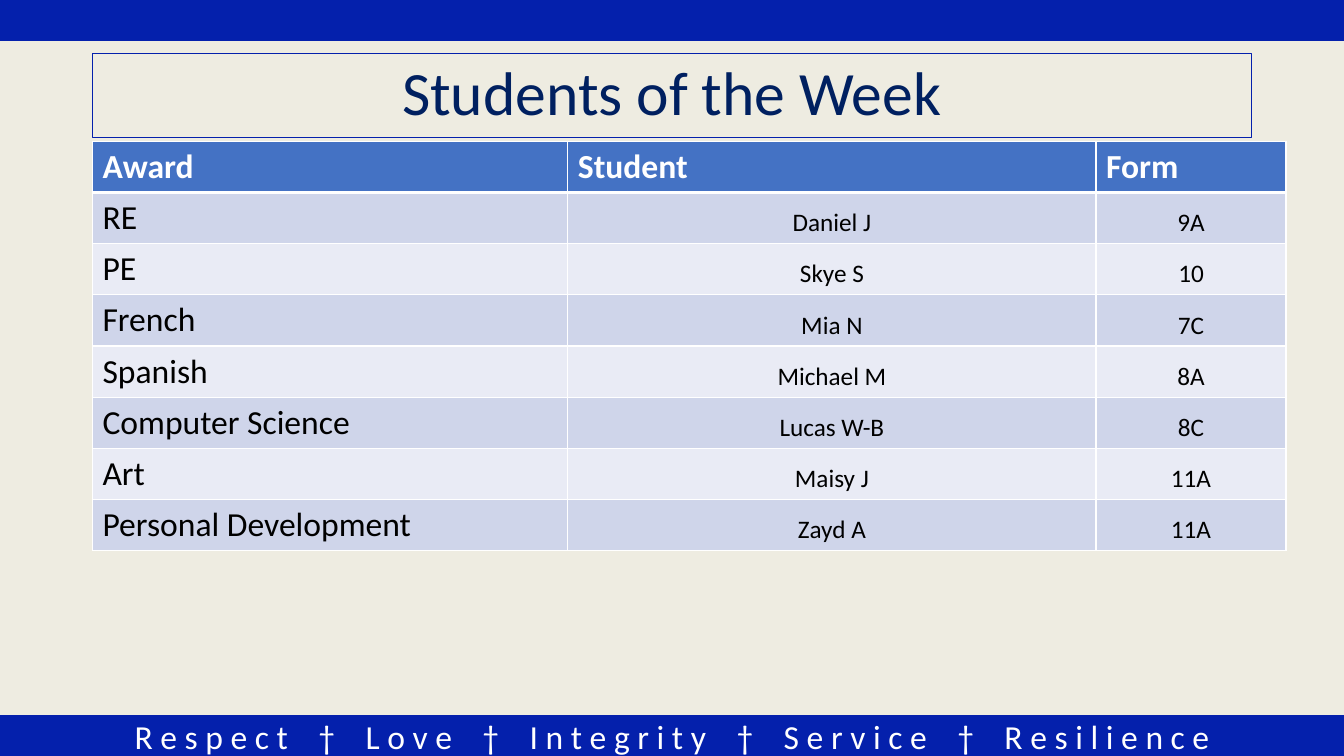
from lxml.etree import SubElement
from pptx import Presentation
from pptx.dml.color import RGBColor
from pptx.enum.shapes import MSO_SHAPE
from pptx.enum.text import MSO_ANCHOR, PP_ALIGN
from pptx.oxml.ns import qn
from pptx.util import Cm, Pt

# Content
TITLE = "Students of the Week"
VALUES = ["Respect", "Love", "Integrity", "Service", "Resilience"]
ROWS = [
    ("Award", "Student", "Form"),
    ("RE", "Daniel J", "9A"),
    ("PE", "Skye S", "10"),
    ("French", "Mia N", "7C"),
    ("Spanish", "Michael M", "8A"),
    ("Computer Science", "Lucas W-B", "8C"),
    ("Art", "Maisy J", "11A"),
    ("Personal Development", "Zayd A", "11A"),
]

# Colours and measures
CREAM = RGBColor(0xEE, 0xEC, 0xE1)
ROYAL = RGBColor(0x04, 0x20, 0xAC)
NAVY = RGBColor(0x00, 0x20, 0x60)
HEAD = RGBColor(0x44, 0x72, 0xC4)
BANDS = [RGBColor(0xE9, 0xEB, 0xF5), RGBColor(0xCF, 0xD5, 0xEA)]
WHITE = RGBColor(0xFF, 0xFF, 0xFF)
BLACK = RGBColor(0x00, 0x00, 0x00)
WIDE, HIGH, BAR = 33.87, 19.05, 1.02
LEFT = 2.33
COLS = [11.98, 13.31, 4.79]
ROW = 1.29
GAP = 16.3  # extra points beside each dagger


def write(para, text, size=24, color=BLACK, bold=False, align=None, space=None):
    run = para.add_run()
    run.text = text
    font = run.font
    font.name, font.size, font.bold = "Calibri", Pt(size), bold
    font.color.rgb = color
    if align is not None:
        para.alignment = align
    if space:
        run._r.get_or_add_rPr().set("spc", str(round(space * 100)))


def box(slide, left, top, width, height, fill=None, line=1):
    shape = slide.shapes.add_shape(
        MSO_SHAPE.RECTANGLE, Cm(left), Cm(top), Cm(width), Cm(height))
    shape.shadow.inherit = False
    if fill is None:
        shape.fill.background()
    else:
        shape.fill.solid()
        shape.fill.fore_color.rgb = fill
    shape.line.color.rgb = ROYAL
    shape.line.width = Pt(line)
    shape.text_frame.word_wrap = True
    shape.text_frame.vertical_anchor = MSO_ANCHOR.MIDDLE
    return shape


def border(cell, side, width):
    line = SubElement(cell._tc.get_or_add_tcPr(), qn("a:ln" + side), w=str(Pt(width)))
    fill = SubElement(line, qn("a:solidFill"))
    SubElement(fill, qn("a:srgbClr"), val=str(WHITE))


deck = Presentation()
deck.slide_width, deck.slide_height = Cm(WIDE), Cm(HIGH)
slide = deck.slides.add_slide(deck.slide_layouts[6])
slide.background.fill.solid()
slide.background.fill.fore_color.rgb = CREAM

# Footer and top bars
foot = box(slide, 0, HIGH - BAR, WIDE, BAR, fill=ROYAL)
para = foot.text_frame.paragraphs[0]
para.alignment = PP_ALIGN.CENTER
for i, value in enumerate(VALUES):
    if i:
        write(para, " ", color=WHITE, space=GAP)
        write(para, "†", color=WHITE)
        write(para, " ", color=WHITE, space=GAP)
    write(para, " ".join(value), color=WHITE)
box(slide, 0, 0, WIDE, BAR, fill=ROYAL)

# Title
title = box(slide, LEFT, 1.35, 29.21, 2.11, line=0.75)
para = title.text_frame.paragraphs[0]
para.line_spacing = 0.9
write(para, TITLE, size=44, color=NAVY, align=PP_ALIGN.CENTER)

# Awards table
table = slide.shapes.add_table(
    len(ROWS), len(COLS), Cm(LEFT), Cm(3.56), Cm(sum(COLS)), Cm(ROW * len(ROWS))).table
for col, width in zip(table.columns, COLS):
    col.width = Cm(width)
for r, row in enumerate(ROWS):
    table.rows[r].height = Cm(ROW)
    for c, text in enumerate(row):
        cell = table.cell(r, c)
        for side in "LRTB":
            thick = (r, side) in [(0, "B"), (1, "T")]
            border(cell, side, 3 if thick else 1)
        cell.fill.solid()
        cell.fill.fore_color.rgb = BANDS[r % 2] if r else HEAD
        para = cell.text_frame.paragraphs[0]
        if r == 0:
            write(para, text, color=WHITE, bold=True)
        elif c == 0:
            write(para, text)
        else:
            cell.vertical_anchor = MSO_ANCHOR.BOTTOM
            cell.margin_left = cell.margin_right = cell.margin_top = Cm(0.03)
            cell.margin_bottom = Cm(0.13)
            write(para, text, size=18, align=PP_ALIGN.CENTER)

deck.save("out.pptx")
